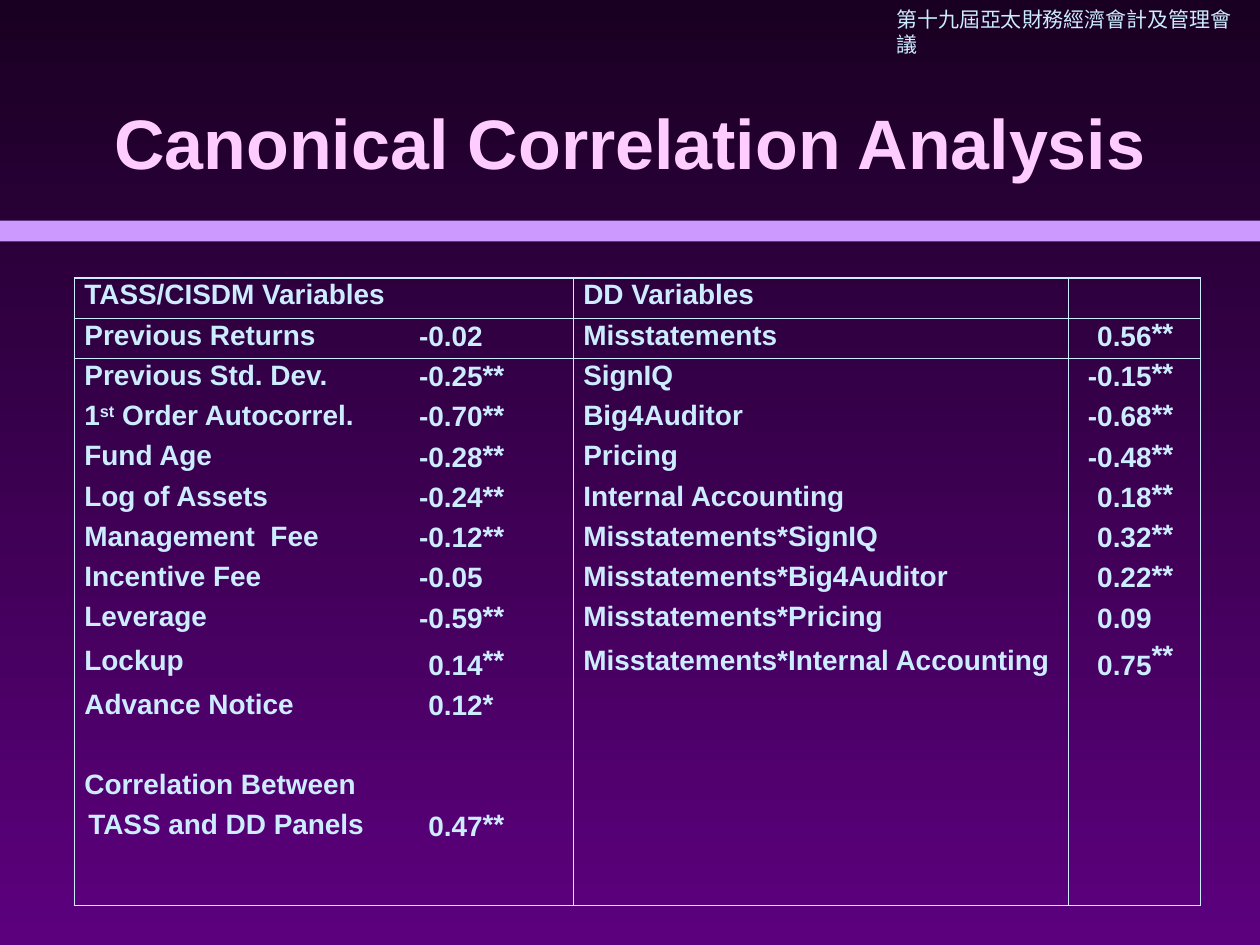
from dataclasses import dataclass

from lxml.etree import SubElement
from pptx import Presentation
from pptx.dml.color import RGBColor
from pptx.enum.shapes import MSO_SHAPE
from pptx.enum.text import MSO_ANCHOR, PP_ALIGN
from pptx.oxml.ns import qn
from pptx.util import Pt


@dataclass(frozen=True)
class Theme:
    background_top: str = "190022"
    background_bottom: str = "5D007E"
    bar: str = "CC99FF"
    title: str = "FFCCFF"
    text: str = "CCECFF"
    font: str = "Arial"
    header_font: str = "Times New Roman"
    title_size: int = 40
    table_size: int = 16
    header_size: int = 12
    border_width: int = 1
    plain_table: str = "{2D5ABB26-0587-4C30-8999-92F81FD0307C}"


THEME = Theme()
COLUMN_WIDTHS = [179.3, 54, 51.8, 283, 47.5, 28.1]
ROW_HEIGHTS = [23] * 9 + [27] + [23] * 4 + [32.5]

FUND_ROWS = [
    ("TASS/CISDM Variables", "", ""),
    ("Previous Returns", "-0.02", ""),
    ("Previous Std. Dev.", "-0.25", "**"),
    ("1^st^ Order Autocorrel.", "-0.70", "**"),
    ("Fund Age", "-0.28", "**"),
    ("Log of Assets", "-0.24", "**"),
    ("Management  Fee", "-0.12", "**"),
    ("Incentive Fee", "-0.05", ""),
    ("Leverage", "-0.59", "**"),
    ("Lockup", "0.14", "**"),
    ("Advance Notice", "0.12", "*"),
    ("", "", ""),
    ("Correlation Between", "", ""),
    ("TASS and DD Panels", "0.47", "**"),
]
DD_ROWS = [
    ("DD Variables", "", ""),
    ("Misstatements", "0.56", "**"),
    ("SignIQ", "-0.15", "**"),
    ("Big4Auditor", "-0.68", "**"),
    ("Pricing", "-0.48", "**"),
    ("Internal Accounting", "0.18", "**"),
    ("Misstatements*SignIQ", "0.32", "**"),
    ("Misstatements*Big4Auditor", "0.22", "**"),
    ("Misstatements*Pricing", "0.09", ""),
    ("Misstatements*Internal Accounting", "0.75", "**"),
]

MARGINS = {"margin_left": 0, "margin_right": 0, "margin_top": 0, "margin_bottom": Pt(3.6)}
LABEL = MARGINS | {"margin_left": Pt(5.76), "margin_right": Pt(5.76), "vertical_anchor": MSO_ANCHOR.MIDDLE}
INDENTED_LABEL = LABEL | {"margin_left": Pt(8), "margin_right": 0}
VALUE = MARGINS | {"vertical_anchor": MSO_ANCHOR.BOTTOM}
FUND_STARS = MARGINS | {"vertical_anchor": MSO_ANCHOR.MIDDLE}
DD_STARS = MARGINS | {"vertical_anchor": MSO_ANCHOR.TOP}
EMPTY = MARGINS | {"margin_bottom": 0}


def set_attributes(target, values):
    for name, value in values.items():
        setattr(target, name, value)


class SlideBuilder:
    """Draws themed elements on the current slide."""

    def __init__(self, slide, theme):
        self.slide = slide
        self.theme = theme

    def add_text(self, paragraph, text, color, alignment=PP_ALIGN.LEFT, **font):
        paragraph.alignment = alignment
        for index, part in enumerate(text.split("^")):
            run = paragraph.add_run()
            run.text = part
            set_attributes(run.font, font)
            run.font.color.rgb = RGBColor.from_string(color)
            if index % 2:
                run._r.get_or_add_rPr().set("baseline", "30000")

    def background(self):
        fill = self.slide.background.fill
        fill.gradient()
        fill.gradient_angle = 270
        colors = (self.theme.background_top, self.theme.background_bottom)
        for stop, position, color in zip(fill.gradient_stops, (0, 1), colors):
            stop.position = position
            stop.color.rgb = RGBColor.from_string(color)

    def bar(self, left, top, width, height):
        shape = self.slide.shapes.add_shape(MSO_SHAPE.RECTANGLE, Pt(left), Pt(top), Pt(width), Pt(height))
        shape.shadow.inherit = False
        shape.fill.solid()
        shape.fill.fore_color.rgb = RGBColor.from_string(self.theme.bar)
        shape.line.fill.background()

    def conference_name(self, text, left, top, width, height):
        shape = self.slide.shapes.add_textbox(Pt(left), Pt(top), Pt(width), Pt(height))
        shape.text_frame.word_wrap = False
        self.add_text(shape.text_frame.paragraphs[0], text, self.theme.text,
                      name=self.theme.header_font, size=Pt(self.theme.header_size))

    def title(self, text, left, top, width, height):
        shape = self.slide.shapes.title
        set_attributes(shape, {"left": Pt(left), "top": Pt(top), "width": Pt(width), "height": Pt(height)})
        set_attributes(shape.text_frame, {"word_wrap": True, "vertical_anchor": MSO_ANCHOR.MIDDLE})
        self.add_text(shape.text_frame.paragraphs[0], text, self.theme.title, PP_ALIGN.CENTER,
                      name=self.theme.font, size=Pt(self.theme.title_size), bold=True)

    def borders(self, cell, sides):
        properties = cell._tc.get_or_add_tcPr()
        for side in sides:
            line = SubElement(properties, qn(f"a:ln{side}"), w=str(Pt(self.theme.border_width)))
            fill = SubElement(line, qn("a:solidFill"))
            SubElement(fill, qn("a:srgbClr"), val=self.theme.text)

    def cell(self, cell, text, sides, style, alignment):
        self.borders(cell, sides)
        cell.fill.background()
        set_attributes(cell, style if text else EMPTY)
        if text:
            self.add_text(cell.text_frame.paragraphs[0], text, self.theme.text, alignment,
                          name=self.theme.font, size=Pt(self.theme.table_size), bold=True)

    def table(self, left, top, panels):
        rows, columns = len(ROW_HEIGHTS), len(COLUMN_WIDTHS)
        frame = self.slide.shapes.add_table(rows, columns, Pt(left), Pt(top),
                                            Pt(sum(COLUMN_WIDTHS)), Pt(sum(ROW_HEIGHTS)))
        table = frame.table
        set_attributes(table, {"first_row": False, "horz_banding": False})
        table._tbl.tblPr.find(qn("a:tableStyleId")).text = self.theme.plain_table
        for column, width in zip(table.columns, COLUMN_WIDTHS):
            column.width = Pt(width)
        for row, height in zip(table.rows, ROW_HEIGHTS):
            row.height = Pt(height)
        table.cell(0, 0).merge(table.cell(0, 1))
        for panel_index, (records, stars_style) in enumerate(panels):
            styles = (LABEL, VALUE, stars_style)
            for row in range(rows):
                texts = records[row] if row < len(records) else ("", "", "")
                for position, text in enumerate(texts):
                    sides = ("L", "", "R")[position]
                    sides += "T" if row < 2 else ""
                    sides += "B" if row in (0, rows - 1) else ""
                    style = INDENTED_LABEL if text == "TASS and DD Panels" else styles[position]
                    alignment = PP_ALIGN.RIGHT if position == 1 else PP_ALIGN.LEFT
                    self.cell(table.cell(row, panel_index * 3 + position), text, sides, style, alignment)


def main():
    presentation = Presentation()
    set_attributes(presentation, {"slide_width": Pt(720), "slide_height": Pt(540)})
    slide = presentation.slides.add_slide(presentation.slide_layouts[5])
    builder = SlideBuilder(slide, THEME)
    builder.background()
    builder.bar(0, 126, 720, 12)
    builder.conference_name("第十九屆亞太財務經濟會計及管理會議", 505, 0, 215, 21.6)
    builder.title("Canonical Correlation Analysis", 54, 36, 612, 90)
    builder.table(42.5, 159, [(FUND_ROWS, FUND_STARS), (DD_ROWS, DD_STARS)])
    presentation.save("out.pptx")


if __name__ == "__main__":
    main()
